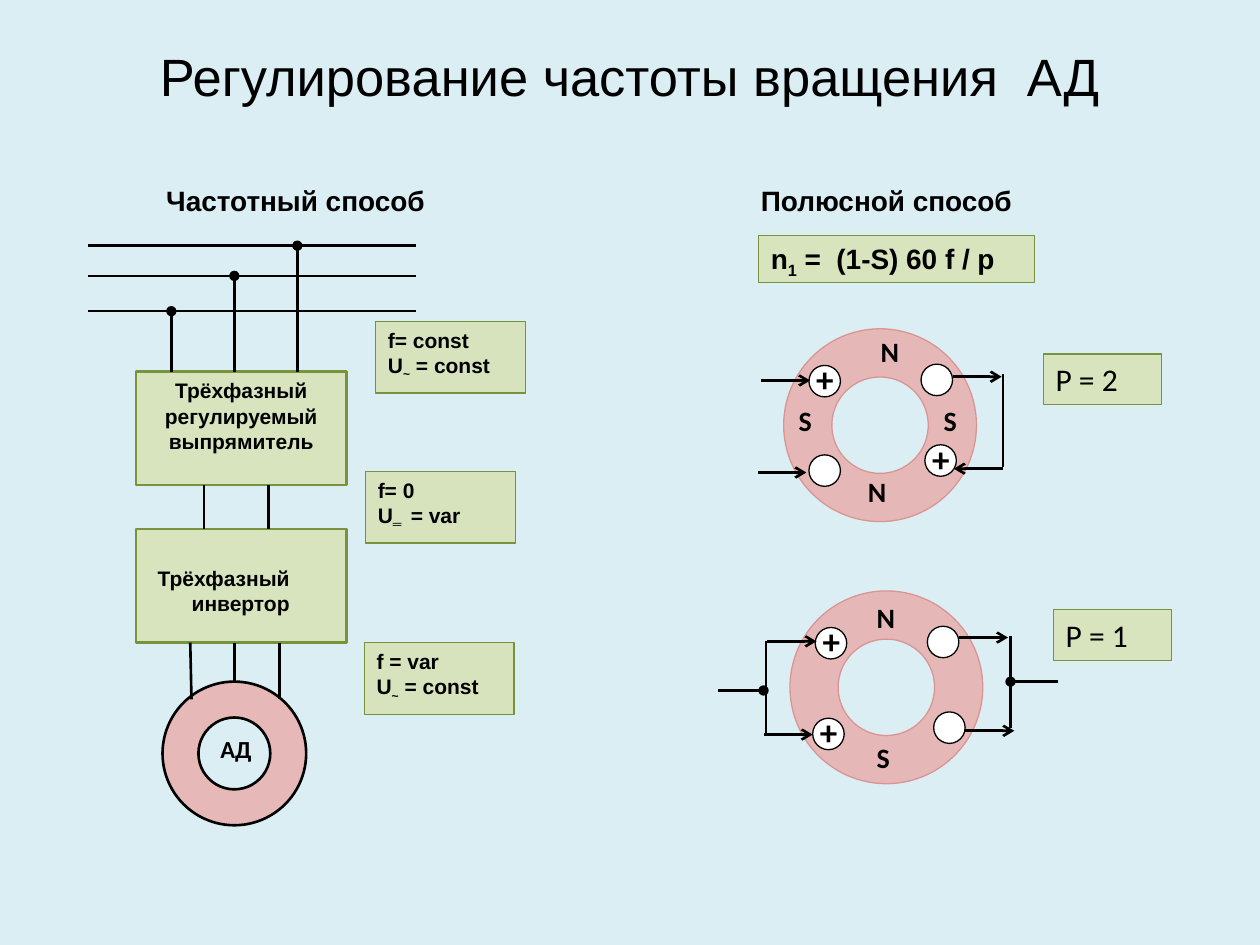
import pptx
import pptx.util
import pptx.dml.color
import pptx.enum.shapes
import pptx.enum.text
import lxml.etree
from pptx.util import Inches
from pptx.oxml.ns import qn

COLORS = {
    "background": "DBEEF4",
    "ink": "000000",
    "block": "D7E4BD",
    "block_edge": "77933C",
    "label": "D6E3BC",
    "label_edge": "76923C",
    "motor": "E6B9B8",
    "ring": "E5B8B7",
    "ring_edge": "D99594",
    "white": "FFFFFF",
}
SHAPES = pptx.enum.shapes.MSO_SHAPE
ALIGN = pptx.enum.text.PP_ALIGN
RING_SIZE = 1.53
COIL_SIZE = 0.25


def color(name):
    return pptx.dml.color.RGBColor.from_string(COLORS[name])


def write_text(box, text, size, font="Arial", bold=True, align=ALIGN.LEFT, top=0.05, right=0.1):
    frame = box.text_frame
    frame.word_wrap = True
    frame.auto_size = pptx.enum.text.MSO_AUTO_SIZE.NONE
    frame.vertical_anchor = pptx.enum.text.MSO_ANCHOR.TOP
    frame.margin_left, frame.margin_right = Inches(0.1), Inches(right)
    frame.margin_top, frame.margin_bottom = Inches(top), Inches(0.05)
    for number, line in enumerate(text.split("\n")):
        para = frame.add_paragraph() if number else frame.paragraphs[0]
        para.alignment = align
        for index, piece in enumerate(line.split("_")):
            span = para.add_run()
            span.text = piece
            span.font.name = font
            span.font.size = pptx.util.Pt(size)
            span.font.bold = bold
            span.font.color.rgb = color("ink")
            if index % 2:
                span.font._element.set("baseline", "-25000")


def add_text(page, place, text, size, **format):
    box = page.shapes.add_textbox(*map(Inches, place))
    write_text(box, text, size, **format)


def add_figure(page, kind, place, fill, edge, width=0.75):
    figure = page.shapes.add_shape(kind, *map(Inches, place))
    figure.shadow.inherit = False
    figure.fill.solid()
    figure.fill.fore_color.rgb = color(fill)
    figure.line.color.rgb = color(edge)
    figure.line.width = pptx.util.Pt(width)
    return figure


def add_plate(page, place, text, size, fill="block", width=0.75, **format):
    plate = add_figure(page, SHAPES.RECTANGLE, place, fill, fill + "_edge", width)
    write_text(plate, text, size, **format)


def add_wire(page, x1, y1, x2, y2, tip=None):
    wire = page.shapes.add_connector(
        pptx.enum.shapes.MSO_CONNECTOR.STRAIGHT, *map(Inches, (x1, y1, x2, y2)))
    wire.line.color.rgb = color("ink")
    wire.line.width = pptx.util.Pt(1.5)
    if tip:
        lxml.etree.SubElement(wire.line._get_or_add_ln(), qn("a:tailEnd"), type=tip)
    lxml.etree.SubElement(wire._element.spPr, qn("a:effectLst"))


def add_pole_ring(page, left, top, coils, poles, wires):
    add_figure(page, SHAPES.DONUT, (left, top, RING_SIZE, RING_SIZE), "ring", "ring_edge")
    for x, y, sign in coils:
        add_figure(page, SHAPES.OVAL, (x, y, COIL_SIZE, COIL_SIZE), "white", "ink")
        if sign:
            add_text(page, (x - 0.04, y - 0.11, 0.4, 0.46), sign, 20, font="Calibri")
    for wire in wires:
        add_wire(page, *wire)
    for x, y, name in poles:
        add_text(page, (x, y, 0.35, 0.4), name, 16, font="Calibri")


def add_frequency_scheme(page):
    add_plate(page, (1.08, 2.95, 1.67, 0.9), "Трёхфазный регулируемый выпрямитель",
              12, width=1.5, align=ALIGN.CENTER)
    add_plate(page, (1.08, 4.2, 1.67, 0.9), "Трёхфазный инвертор",
              12, width=1.5, align=ALIGN.RIGHT, top=0.29, right=0.45)
    add_figure(page, SHAPES.DONUT, (1.29, 5.41, 1.14, 1.14), "motor", "ink", 1.5)
    add_text(page, (1.65, 5.78, 0.74, 0.56), "АД", 14, font="Calibri")
    for x, y in ((1.36, 2.47), (1.86, 2.19), (2.36, 1.95)):
        add_wire(page, 0.7, y, 3.3, y)
        add_wire(page, x, 2.95, x, y, "oval")
    for x in (1.62, 2.13):
        add_wire(page, x, 3.85, x, 4.2)
    for start, end, bottom in ((1.51, 1.52, 5.55), (1.86, 1.86, 5.41), (2.22, 2.22, 5.55)):
        add_wire(page, start, 5.1, end, bottom)
    for x, y, text in (
        (2.98, 2.55, "f= const\nU_~_ = const"),
        (2.9, 3.74, "f= 0\nU_═ _ = var"),
        (2.89, 5.1, "f = var\nU_~_ = const"),
    ):
        add_plate(page, (x, y, 1.19, 0.57), text, 12, fill="label")


def add_pole_schemes(page):
    add_pole_ring(
        page, 6.22, 2.61,
        coils=[(6.42, 2.9, "+"), (6.42, 3.61, ""), (7.31, 2.89, ""), (7.34, 3.53, "+")],
        poles=[(7.39, 3.15, "S"), (6.89, 2.61, "N"), (6.24, 3.15, "S"), (6.79, 3.72, "N")],
        wires=[
            (6.04, 3.02, 6.43, 3.02, "arrow"),
            (6.02, 3.75, 6.4, 3.75, "arrow"),
            (7.56, 2.99, 7.95, 2.99, "arrow"),
            (7.96, 3.72, 7.57, 3.72, "arrow"),
            (7.96, 2.97, 7.96, 3.71),
        ])
    add_pole_ring(
        page, 6.27, 4.69,
        coils=[(6.47, 4.98, "+"), (7.36, 4.97, ""), (7.41, 5.65, ""), (6.45, 5.7, "+")],
        poles=[(6.86, 4.72, "N"), (6.86, 5.83, "S")],
        wires=[
            (6.09, 5.09, 6.48, 5.09, "arrow"),
            (5.7, 5.48, 6.06, 5.48, "oval"),
            (6.08, 5.09, 6.08, 5.83),
            (8.4, 5.41, 8.02, 5.41, "oval"),
            (6.06, 5.83, 6.45, 5.83, "arrow"),
            (7.61, 5.06, 8, 5.06, "arrow"),
            (7.66, 5.8, 8.05, 5.8, "arrow"),
            (8.02, 5.05, 8.02, 5.78),
        ])
    add_plate(page, (8.36, 4.84, 0.94, 0.4), "Р = 1", 18, font="Calibri", bold=False)
    add_plate(page, (8.28, 2.81, 0.94, 0.4), "Р = 2", 18, font="Calibri", bold=False)
    add_plate(page, (6.02, 1.87, 2.19, 0.37), "n_1_ =  (1-S) 60 f / p", 16)


def add_title(page, text):
    title = page.shapes.title
    title.left, title.top, title.width, title.height = map(Inches, (0.5, 0.3, 9, 1.11))
    write_text(title, text, 30, bold=False, align=ALIGN.CENTER)


def main():
    deck = pptx.Presentation()
    deck.slide_width, deck.slide_height = Inches(10), Inches(7.5)
    page = deck.slides.add_slide(deck.slide_layouts[5])
    page.background.fill.solid()
    page.background.fill.fore_color.rgb = color("background")
    add_title(page, "Регулирование частоты вращения  АД")
    add_frequency_scheme(page)
    add_pole_schemes(page)
    for left, heading in ((0.47, "Частотный способ"), (5.16, "Полюсной способ")):
        add_text(page, (left, 1.41, 3.75, 0.37), heading, 16, align=ALIGN.CENTER)
    deck.save("out.pptx")


if __name__ == "__main__":
    main()
